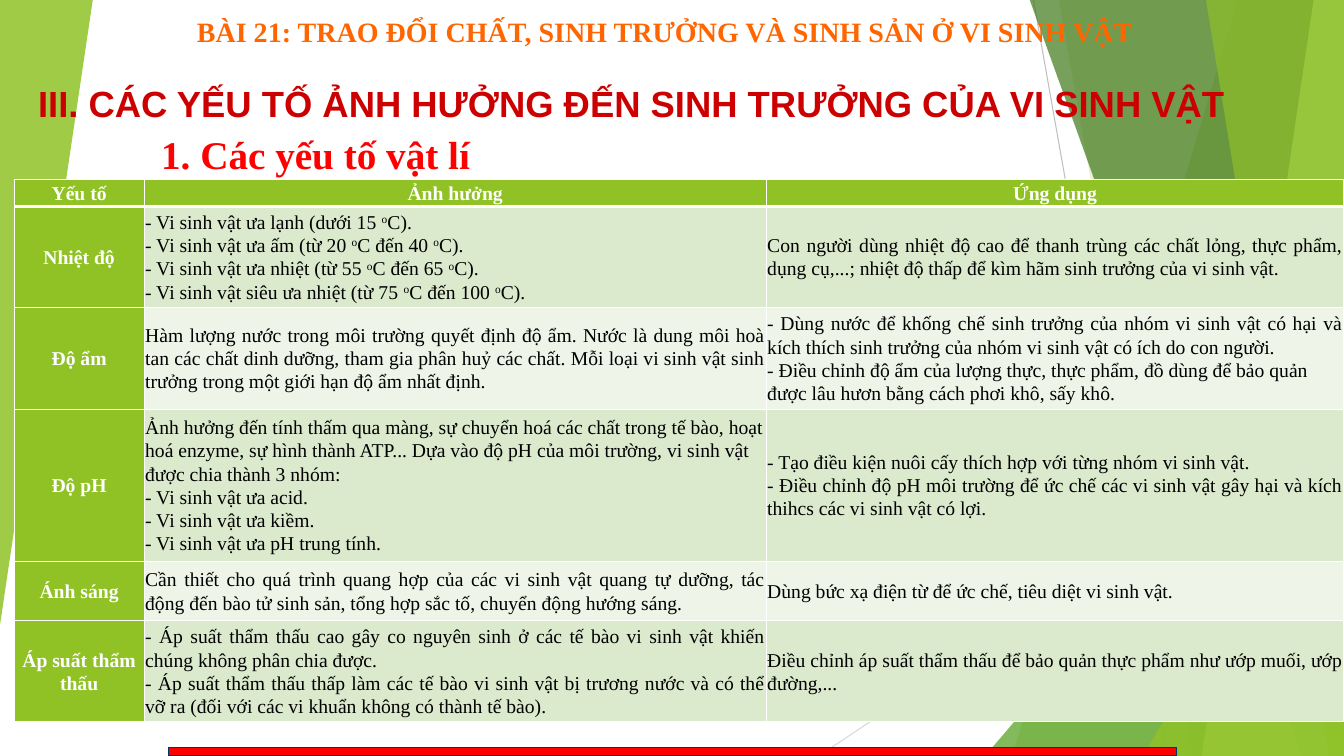
import pptx
import pptx.dml.color
import pptx.enum.shapes
import pptx.enum.text
import pptx.oxml
import pptx.oxml.ns
import pptx.util

Inches = pptx.util.Inches
Pt = pptx.util.Pt
RGBColor = pptx.dml.color.RGBColor
Align = pptx.enum.text.PP_ALIGN
Shape = pptx.enum.shapes.MSO_SHAPE

WHITE = RGBColor(0xFF, 0xFF, 0xFF)
BLACK = RGBColor(0, 0, 0)
RED = RGBColor(0xFF, 0, 0)
CRIMSON = RGBColor(0xCC, 0, 0)
ORANGE = RGBColor(0xFF, 0x66, 0)
MAROON = RGBColor(0x80, 0, 0)
NAVY = RGBColor(0, 0x33, 0x66)
LIME = RGBColor(0x90, 0xC2, 0x26)
GREEN = RGBColor(0x54, 0xA0, 0x21)
FOREST = RGBColor(0x3F, 0x78, 0x19)
PALE_LIME = RGBColor(0xC0, 0xE4, 0x74)
DARK_BAND = RGBColor(0xDB, 0xE9, 0xCD)
LIGHT_BAND = RGBColor(0xEE, 0xF4, 0xE8)
GRAY = RGBColor(0xBF, 0xBF, 0xBF)
LIGHT_GRAY = RGBColor(0xD9, 0xD9, 0xD9)

SERIF = "Times New Roman"
COLUMN_WIDTHS = [1.29, 6.17, 5.73]
ROW_HEIGHTS = [0.27, 1, 1.01, 1.51, 0.59, 1]
HEADERS = ["Yếu tố", "Ảnh hưởng", "Ứng dụng"]
LEFT, JUSTIFY = Align.LEFT, Align.JUSTIFY
FACTORS = [
    ("Nhiệt độ",
     [(LEFT, "- Vi sinh vật ưa lạnh (dưới 15 ^o^C)."),
      (LEFT, "- Vi sinh vật ưa ấm (từ 20 ^o^C đến 40 ^o^C)."),
      (LEFT, "- Vi sinh vật ưa nhiệt (từ 55 ^o^C đến 65 ^o^C)."),
      (JUSTIFY, "- Vi sinh vật siêu ưa nhiệt (từ 75 ^o^C đến 100 ^o^C).")],
     [(JUSTIFY, "Con người dùng nhiệt độ cao để thanh trùng các chất lỏng, thực phẩm, dụng cụ,...; "
                "nhiệt độ thấp để kìm hãm sinh trưởng của vi sinh vật.")]),
    ("Độ ẩm",
     [(JUSTIFY, "Hàm lượng nước trong môi trường quyết định độ ẩm. Nước là dung môi hoà tan các chất "
                "dinh dưỡng, tham gia phân huỷ các chất. Mỗi loại vi sinh vật sinh trưởng trong một "
                "giới hạn độ ẩm nhất định.")],
     [(JUSTIFY, "- Dùng nước để khống chế sinh trưởng của nhóm vi sinh vật có hại và kích thích "
                "sinh trưởng của nhóm vi sinh vật có ích do con người."),
      (LEFT, "- Điều chỉnh độ ẩm của lượng thực, thực phẩm, đồ dùng để bảo quản được lâu hươn "
             "bằng cách phơi khô, sấy khô.")]),
    ("Độ pH",
     [(LEFT, "Ảnh hưởng đến tính thấm qua màng, sự chuyển hoá các chất trong tế bào, hoạt hoá enzyme, "
             "sự hình thành ATP... Dựa vào độ pH của môi trường, vi sinh vật được chia thành 3 nhóm:"),
      (LEFT, "- Vi sinh vật ưa acid."),
      (JUSTIFY, "- Vi sinh vật ưa kiềm."),
      (JUSTIFY, "- Vi sinh vật ưa pH trung tính.")],
     [(JUSTIFY, "- Tạo điều kiện nuôi cấy thích hợp với từng nhóm vi sinh vật."),
      (JUSTIFY, "- Điều chỉnh độ pH môi trường để ức chế các vi sinh vật gây hại và kích thihcs "
                "các vi sinh vật có lợi.")]),
    ("Ánh sáng",
     [(JUSTIFY, "Cần thiết cho quá trình quang hợp của các vi sinh vật quang tự dưỡng, tác động đến "
                "bào tử sinh sản, tổng hợp sắc tố, chuyển động hướng sáng.")],
     [(JUSTIFY, "Dùng bức xạ điện từ để ức chế, tiêu diệt vi sinh vật.")]),
    ("Áp suất thẩm thấu",
     [(JUSTIFY, "- Áp suất thẩm thấu cao gây co nguyên sinh ở các tế bào vi sinh vật khiến chúng "
                "không phân chia được. "),
      (JUSTIFY, "- Áp suất thẩm thấu thấp làm các tế bào vi sinh vật bị trương nước và có thể vỡ ra "
                "(đối với các vi khuẩn không có thành tế bào).")],
     [(JUSTIFY, "Điều chỉnh áp suất thẩm thấu để bảo quản thực phẩm như ướp muối, ướp đường,...")]),
]


def line_xml(tag, color, width):
    """Return a solid line element of the given tag, colour and width in points."""
    return pptx.oxml.parse_xml(
        f'<a:{tag} {pptx.oxml.ns.nsdecls("a")} w="{Pt(width)}"><a:solidFill>'
        f'<a:srgbClr val="{color}"/></a:solidFill></a:{tag}>')


def paint(shape, color, opacity):
    """Fill a shape with a translucent colour, without outline or shadow."""
    shape.shadow.inherit = False
    shape.line.fill.background()
    shape.fill.solid()
    shape.fill.fore_color.rgb = color
    srgb = shape.element.spPr.find(".//" + pptx.oxml.ns.qn("a:srgbClr"))
    alpha = pptx.oxml.parse_xml(f'<a:alpha {pptx.oxml.ns.nsdecls("a")} val="{opacity * 1000}"/>')
    srgb.append(alpha)


def add_ray(slide, start, end, color):
    """Draw a thin background line."""
    ray = slide.shapes.add_connector(
        pptx.enum.shapes.MSO_CONNECTOR.STRAIGHT, *map(Inches, start + end))
    ray.line.color.rgb = color
    ray.line.width = Pt(0.75)
    ray.element.spPr.append(
        pptx.oxml.parse_xml(f'<a:effectLst {pptx.oxml.ns.nsdecls("a")}/>'))


def add_band(slide, box, top_x, bottom_x, color, opacity):
    """Draw a slanted band from its left edge to the right side of the box."""
    left, top, width, height = box
    right, bottom = left + width, top + height
    corners = [(right, top), (right, bottom), (bottom_x, bottom)]
    builder = slide.shapes.build_freeform(Inches(top_x), Inches(top))
    builder.add_line_segments([(Inches(x), Inches(y)) for x, y in corners])
    paint(builder.convert_to_shape(), color, opacity)


def add_triangle(slide, box, color, opacity, rotation=0):
    """Draw a right triangle with its apex above the right corner."""
    triangle = slide.shapes.add_shape(Shape.ISOSCELES_TRIANGLE, *map(Inches, box))
    triangle.adjustments[0] = 1
    triangle.rotation = rotation
    paint(triangle, color, opacity)


def add_backdrop(slide, box):
    """Draw the green facets on both sides of the box."""
    left, top, width, height = box
    right, bottom = left + width, top + height
    facets = (left, top - 0.01, width, height + 0.01)
    add_ray(slide, (10.25, top), (11.58, bottom), GRAY)
    add_ray(slide, (right, 4.03), (8.12, bottom), LIGHT_GRAY)
    add_band(slide, facets, 12.28, 10.04, LIME, 30)
    add_band(slide, facets, 10.5, 11.83, LIME, 20)
    add_triangle(slide, (right - 3.56, bottom - 4.17, 3.56, 4.17), GREEN, 72)
    add_band(slide, facets, 10.21, 12.91, FOREST, 70)
    add_band(slide, facets, 13.03, 11.92, PALE_LIME, 70)
    add_band(slide, facets, 11.96, 13.18, LIME, 65)
    add_triangle(slide, (right - 1.99, bottom - 3.57, 1.99, 3.57), LIME, 80)
    add_triangle(slide, (left, top, 0.92, 6.2), LIME, 85, rotation=180)


def add_red_bar(slide, box):
    """Draw the red bar at the foot of the slide."""
    bar = slide.shapes.add_shape(Shape.RECTANGLE, *map(Inches, box))
    bar.shadow.inherit = False
    bar.fill.solid()
    bar.fill.fore_color.rgb = RED
    bar.line.color.rgb = NAVY
    bar.line.width = Pt(0.75)


def format_paragraph(paragraph, size, color, align, font_name=SERIF, bold=True):
    """Align a paragraph and set the font of its runs."""
    paragraph.alignment = align
    for run in paragraph.runs:
        run.font.name = font_name
        run.font.size = Pt(size)
        run.font.bold = bold
        run.font.color.rgb = color


def add_heading(slide, box, text, size, color, align, font_name=SERIF, wrap=True):
    """Place a one-line heading in the box."""
    heading = slide.shapes.add_textbox(*map(Inches, box))
    heading.text_frame.word_wrap = wrap
    heading.text_frame.text = text
    format_paragraph(heading.text_frame.paragraphs[0], size, color, align, font_name)


def place_title(slide, box, text):
    """Bring the title placeholder to the front and fit it to the box."""
    title = slide.shapes.title
    title.element.getparent().append(title.element)
    title.left, title.top, title.width, title.height = map(Inches, box)
    frame = title.text_frame
    frame.text = text
    frame.word_wrap = False
    frame.auto_size = pptx.enum.text.MSO_AUTO_SIZE.NONE
    frame.vertical_anchor = pptx.enum.text.MSO_ANCHOR.TOP
    format_paragraph(frame.paragraphs[0], 20, ORANGE, Align.CENTER)
    frame.paragraphs[0].runs[0].font._element.insert(0, line_xml("ln", MAROON, 1.5))


def fill_cell(cell, paragraphs, fill, color, bold, top_width, bottom_width):
    """Write aligned paragraphs in a cell, with ^ around superscripts, and frame it."""
    cell.margin_left = cell.margin_right = cell.margin_top = cell.margin_bottom = Inches(0.01)
    cell.vertical_anchor = pptx.enum.text.MSO_ANCHOR.MIDDLE
    for index, (align, text) in enumerate(paragraphs):
        frame = cell.text_frame
        paragraph = frame.add_paragraph() if index else frame.paragraphs[0]
        paragraph.line_spacing = 1.07
        for position, part in enumerate(text.split("^")):
            run = paragraph.add_run()
            run.text = part
            if position % 2:
                run.font._element.set("baseline", "30000")
        format_paragraph(paragraph, 14, color, align, bold=bold)
    properties = cell._tc.get_or_add_tcPr()
    for tag, width in (("lnL", 1), ("lnR", 1), ("lnT", top_width), ("lnB", bottom_width)):
        properties.append(line_xml(tag, WHITE, width))
    cell.fill.solid()
    cell.fill.fore_color.rgb = fill


def add_factor_table(slide, box):
    """Place the table of physical factors in the box."""
    rows = [[[(Align.CENTER, header)] for header in HEADERS]]
    rows += [[[(Align.CENTER, name)], effect, use] for name, effect, use in FACTORS]
    table = slide.shapes.add_table(len(rows), len(HEADERS), *map(Inches, box)).table
    for column, width in zip(table.columns, COLUMN_WIDTHS):
        column.width = Inches(width)
    for r, (row, height) in enumerate(zip(rows, ROW_HEIGHTS)):
        table.rows[r].height = Inches(height)
        for c, paragraphs in enumerate(row):
            heading = r == 0 or c == 0
            fill = LIME if heading else DARK_BAND if r % 2 else LIGHT_BAND
            fill_cell(table.cell(r, c), paragraphs, fill, WHITE if heading else BLACK, heading,
                      3 if r == 1 else 1, 3 if r == 0 else 1)


def main():
    """Build the slide and save it."""
    presentation = pptx.Presentation()
    presentation.slide_width, presentation.slide_height = Inches(13.33), Inches(7.5)
    slide = presentation.slides.add_slide(presentation.slide_layouts[5])
    add_backdrop(slide, (0, 0, 13.33, 7.5))
    add_red_bar(slide, (1.67, 7.42, 10, 0.08))
    add_heading(slide, (1.48, 1.24, 3.3, 0.57), "1. Các yếu tố vật lí", 28, RED, Align.CENTER, wrap=False)
    add_heading(slide, (0.28, 0.76, 12.37, 0.54),
                "III. CÁC YẾU TỐ ẢNH HƯỞNG ĐẾN SINH TRƯỞNG CỦA VI SINH VẬT",
                26, CRIMSON, LEFT, "Arial")
    place_title(slide, (0.14, 0.09, 12.91, 0.54),
                "BÀI 21: TRAO ĐỔI CHẤT, SINH TRƯỞNG VÀ SINH SẢN Ở VI SINH VẬT")
    add_factor_table(slide, (0.14, 1.78, sum(COLUMN_WIDTHS), sum(ROW_HEIGHTS)))
    presentation.save("out.pptx")


if __name__ == "__main__":
    main()
